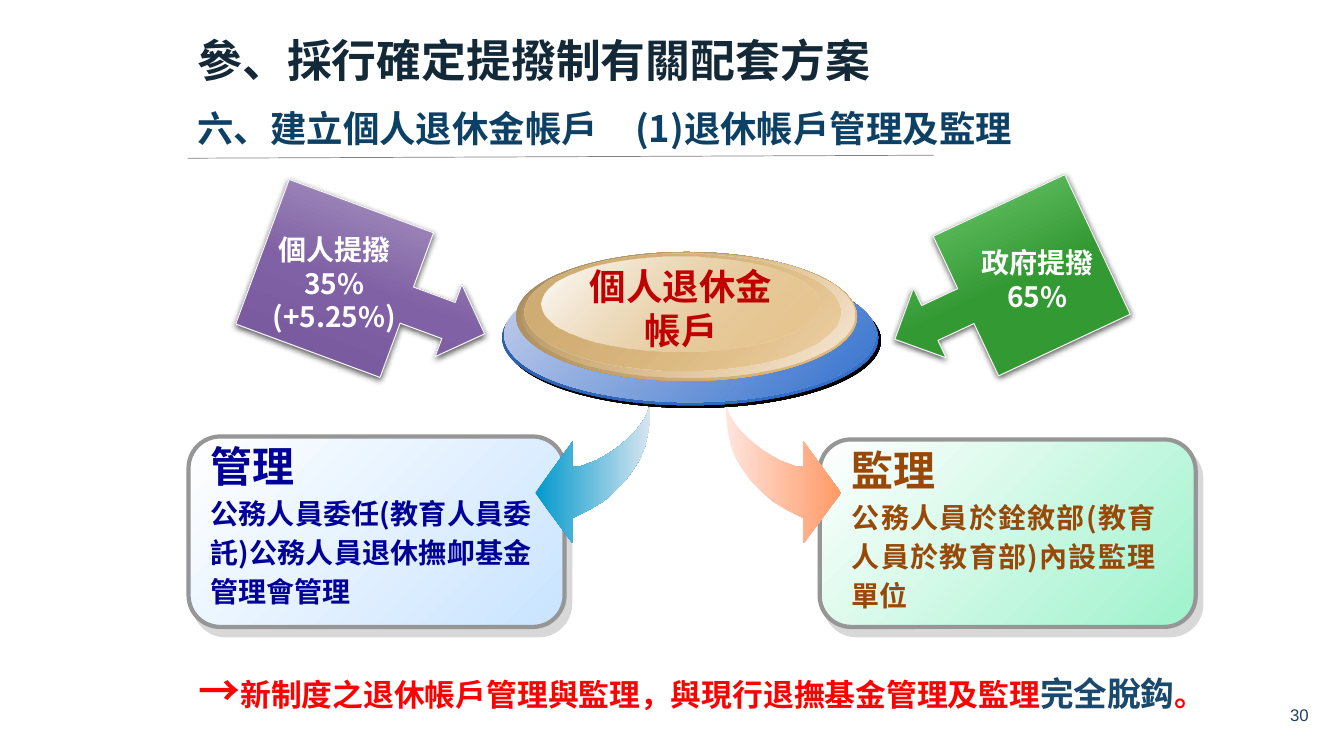
from lxml.etree import SubElement
from pptx import Presentation
from pptx.dml.color import RGBColor
from pptx.enum.shapes import MSO_CONNECTOR, MSO_SHAPE
from pptx.enum.text import MSO_ANCHOR, PP_ALIGN
from pptx.oxml.ns import qn
from pptx.util import Inches, Pt

THEME = {
    "font": "Noto Sans CJK SC",
    "number_font": "Arial",
    "color": {
        "title": "142938", "subtitle": "0D4065", "number": "254061", "rule": "808080",
        "manage": "000099", "supervise": "984807", "account": "C00000",
        "alert": "FF0000", "decouple": "19496C", "white": "FFFFFF",
        "card_edge": "969696", "callout_edge": "F8F8F8",
    },
    "size": {"title": 32, "heading": 30, "subtitle": 26, "strong": 24,
             "conclusion": 22, "body": 20, "number": 12},
    "gradient": {
        "manage_card": [(0, "FFFFFF"), (100, "C9E4FF")],
        "supervise_card": [(0, "FFFFFF"), (100, "9EF2CC")],
        "manage_arrow": [(0, "0099CC"), (100, "D8E5F0")],
        "supervise_arrow": [(0, "FFE5DD"), (100, "FF9966")],
        "government": [(0, "339933"), (50, "339933"), (100, "7ED47E")],
        "personal": [(0, "B3A4C8"), (50, "8061A5"), (100, "715396")],
    },
    "shadow": {
        "card": ("B2B2B2", 50, 0, 7.2, 56),
        "disc": ("000000", 100, 0, 2.8, 45),
        "callout": ("000000", 63, 4.5, 1.5, 90),
    },
}

HEADINGS = [
    ((1.86, 0.28, 7.11, 0.64), [[("參、採行確定提撥制有關配套方案", "title", "title")]], {}),
    ((1.86, 1.06, 10.87, 0.48),
     [[("六、建立個人退休金帳戶　(1)退休帳戶管理及監理", "subtitle", "subtitle")]],
     {"align": PP_ALIGN.JUSTIFY, "spacing": 27}),
]
HEADING_RULE = (1.86, 1.57, 9.26, 1.54)

CARDS = [
    ((8.13, 4.36, 3.73, 1.86), "supervise_card", (8.35, 4.36, 3.21, 1.86), "supervise",
     "監理", "公務人員於銓敘部(教育人員於教育部)內設監理單位"),
    ((1.87, 4.33, 3.73, 1.89), "manage_card", (1.99, 4.32, 3.38, 1.86), "manage",
     "管理", "公務人員委任(教育人員委託)公務人員退休撫卹基金管理會管理"),
]

ARROW_OUTLINE = [
    (6.45, 3.97), (6.45, 4.13), (6.43, 4.28), (6.4, 4.42), (6.35, 4.55), (6.28, 4.66),
    (6.2, 4.77), (6.1, 4.87), (5.99, 4.97), (5.84, 5.06), (5.68, 5.14), (5.68, 5.39),
    (5.31, 4.89), (5.68, 4.38), (5.68, 4.63), (5.75, 4.63), (5.83, 4.6), (5.91, 4.57),
    (6, 4.52), (6.08, 4.47), (6.16, 4.41), (6.24, 4.34), (6.31, 4.27), (6.37, 4.19),
    (6.41, 4.12), (6.44, 4.04),
]
MIRROR_SUM = 13.65

DISCS = [
    ((4.98, 2.68, 3.73, 1.34), [(0, "2A5DA8"), (100, "3371CD")], "disc"),
    ((5, 2.65, 3.69, 1.34), [(0, "C7D0EB"), (100, "3371CD")], None),
    ((5.12, 2.5, 3.38, 1.28), [(0, "A5895C"), (100, "E6BF80")], None),
    ((5.17, 2.51, 3.3, 1.24), [(0, "E6BF80", 0), (100, "F7EBDD")], None),
    ((5.2, 2.52, 3.14, 1.16), [(0, "D0AD74"), (100, "E6BF80", 48)], None),
    ((5.37, 2.55, 2.76, 0.94), [(0, "FFFFFF"), (100, "E6BF80", 38)], None),
]
ACCOUNT = ((5.74, 2.57, 2.03, 1.02), "個人退休金\n帳戶")

CONCLUSION = ((1.87, 6.56, 10.22, 0.59), [[
    ("→", "heading", "alert"),
    ("新制度之退休帳戶管理與監理，與現行退撫基金管理及監理", "conclusion", "alert"),
    ("完全脫鈎", "strong", "decouple"),
    ("。", "conclusion", "alert"),
]])

CONTRIBUTIONS = [
    ((8.77, 2.13, 2.22, 1.53), 154.9, "government", (9.63, 2.39, 1.32, 0.77),
     ["政府提撥", "65%"]),
    ((2.53, 2.14, 2.35, 1.53), 20.3, "personal", (2.6, 2.26, 1.43, 1.11),
     ["個人提撥", "35%", "(+5.25%)"]),
]
PAGE_NUMBER = ((10.08, 6.89, 3, 0.4), "30")


def inches(values):
    return [Inches(value) for value in values]


def add_color(parent, color, opacity=100):
    node = SubElement(parent, qn("a:srgbClr"), val=color)
    if opacity < 100:
        SubElement(node, qn("a:alpha"), val=str(opacity * 1000))


def paint(shape, stops, angle, edge=None, shadow=None):
    shape.fill.background()
    properties = shape._element.spPr
    gradient = properties.makeelement(qn("a:gradFill"), {"rotWithShape": "1"})
    stop_list = SubElement(gradient, qn("a:gsLst"))
    for position, *color in stops:
        add_color(SubElement(stop_list, qn("a:gs"), pos=str(position * 1000)), *color)
    SubElement(gradient, qn("a:lin"), ang=str(angle * 60000), scaled="0")
    properties.replace(properties.find(qn("a:noFill")), gradient)
    if edge:
        color, width = edge
        shape.line.color.rgb = RGBColor.from_string(THEME["color"][color])
        shape.line.width = Pt(width)
    else:
        shape.line.fill.background()
    shape.shadow.inherit = False
    if shadow:
        color, opacity, blur, distance, direction = THEME["shadow"][shadow]
        outer = SubElement(properties.find(qn("a:effectLst")), qn("a:outerShdw"),
                           blurRad=str(Pt(blur)), dist=str(Pt(distance)),
                           dir=str(direction * 60000), algn="ctr", rotWithShape="0")
        add_color(outer, color, opacity)


def add_text(slide, box, paragraphs, align=PP_ALIGN.LEFT, spacing=None, wrap=True,
             anchor=MSO_ANCHOR.TOP, font="font", bold=True):
    frame = slide.shapes.add_textbox(*inches(box)).text_frame
    for name, value in {"word_wrap": wrap, "vertical_anchor": anchor}.items():
        setattr(frame, name, value)
    for index, runs in enumerate(paragraphs):
        paragraph = frame.paragraphs[0] if index == 0 else frame.add_paragraph()
        paragraph.alignment = align
        if spacing and index == len(paragraphs) - 1:
            paragraph.line_spacing = Pt(spacing)
        for text, size, color in runs:
            for line_index, line in enumerate(text.split("\n")):
                if line_index:
                    paragraph.add_line_break()
                run = paragraph.add_run()
                run.text = line
                run.font.color.rgb = RGBColor.from_string(THEME["color"][color])
                values = {"name": THEME[font], "size": Pt(THEME["size"][size]), "bold": bold}
                for name, value in values.items():
                    setattr(run.font, name, value)
                SubElement(run._r.get_or_add_rPr(), qn("a:ea"), typeface=THEME[font])


def add_arrow(slide, outline, gradient):
    start, *rest = [inches(point) for point in outline]
    builder = slide.shapes.build_freeform(*start)
    builder.add_line_segments(rest, close=True)
    paint(builder.convert_to_shape(), THEME["gradient"][gradient], 0)


def main():
    deck = Presentation()
    deck.slide_width, deck.slide_height = inches((13.33, 7.5))
    slide = deck.slides.add_slide(deck.slide_layouts[6])

    number_box, number = PAGE_NUMBER
    add_text(slide, number_box, [[(number, "number", "number")]], align=PP_ALIGN.RIGHT,
             anchor=MSO_ANCHOR.MIDDLE, font="number_font", bold=False)
    for box, paragraphs, layout in HEADINGS:
        add_text(slide, box, paragraphs, **layout)
    rule = slide.shapes.add_connector(MSO_CONNECTOR.STRAIGHT, *inches(HEADING_RULE))
    rule.line.color.rgb = RGBColor.from_string(THEME["color"]["rule"])
    rule.line.width = Pt(0.5)
    SubElement(rule._element.spPr, qn("a:effectLst"))

    for box, gradient, text_box, color, heading, body in CARDS:
        card = slide.shapes.add_shape(MSO_SHAPE.ROUNDED_RECTANGLE, *inches(box))
        paint(card, THEME["gradient"][gradient], 45, ("card_edge", 3), "card")
        add_text(slide, text_box, [[(heading, "heading", color)], [(body, "body", color)]],
                 align=PP_ALIGN.JUSTIFY, spacing=28)

    add_arrow(slide, ARROW_OUTLINE, "manage_arrow")
    add_arrow(slide, [(MIRROR_SUM - x, y) for x, y in ARROW_OUTLINE], "supervise_arrow")

    for box, stops, shadow in DISCS:
        disc = slide.shapes.add_shape(MSO_SHAPE.OVAL, *inches(box))
        paint(disc, stops, 45, shadow=shadow)
    account_box, account = ACCOUNT
    add_text(slide, account_box, [[(account, "subtitle", "account")]],
             align=PP_ALIGN.CENTER, wrap=False)

    add_text(slide, *CONCLUSION, spacing=35)

    for box, rotation, gradient, text_box, lines in CONTRIBUTIONS:
        callout = slide.shapes.add_shape(MSO_SHAPE.RIGHT_ARROW_CALLOUT, *inches(box))
        callout.rotation = rotation
        paint(callout, THEME["gradient"][gradient], 90, ("callout_edge", 0.75), "callout")
        add_text(slide, text_box, [[(line, "body", "white")] for line in lines],
                 align=PP_ALIGN.CENTER, wrap=False)

    deck.save("out.pptx")


if __name__ == "__main__":
    main()
